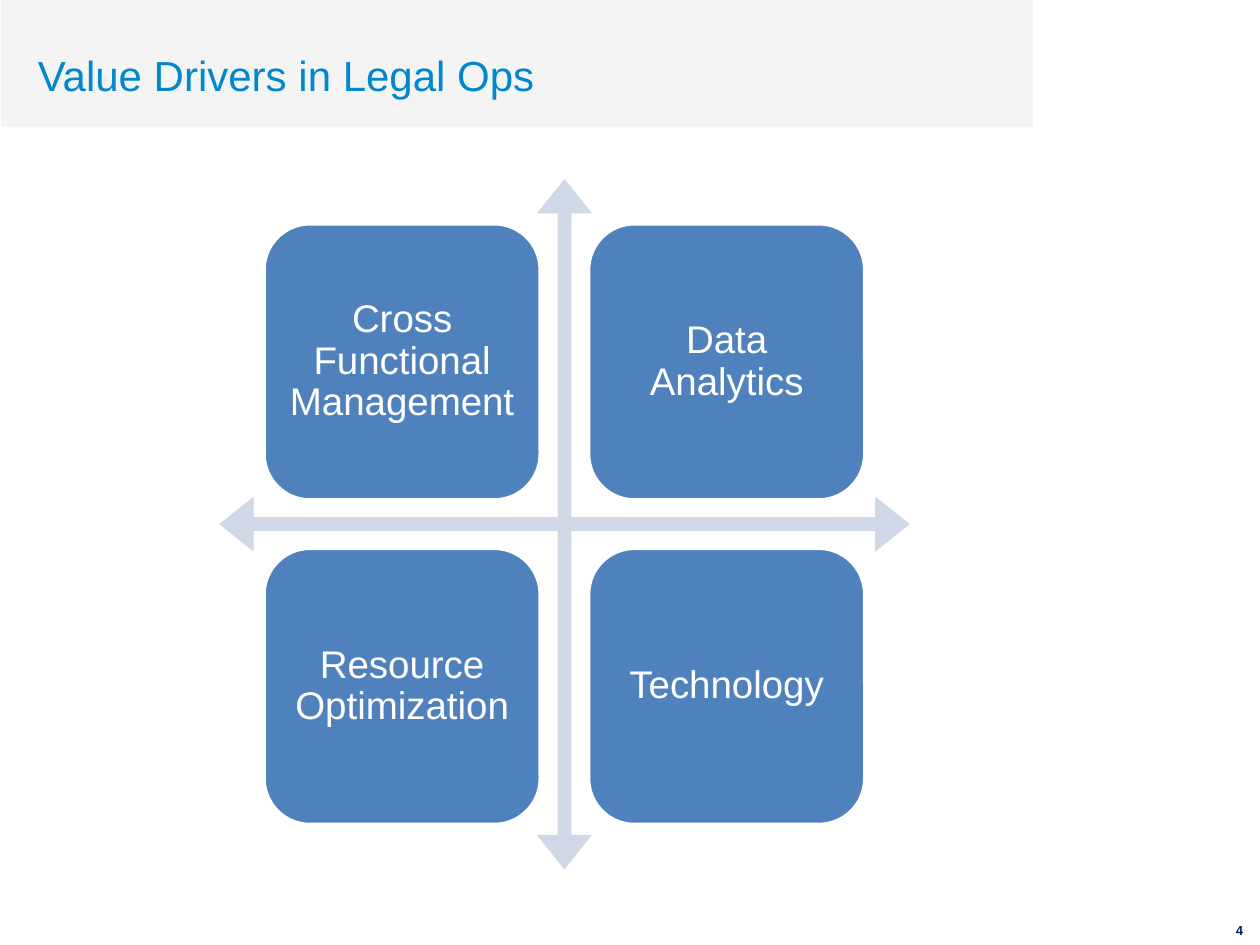
from lxml import etree
from pptx import Presentation
from pptx.dml.color import RGBColor
from pptx.enum.shapes import MSO_SHAPE
from pptx.enum.text import MSO_ANCHOR, PP_ALIGN
from pptx.oxml.ns import qn
from pptx.util import Inches, Pt

RECT, ROUNDED, ARROWS = MSO_SHAPE.RECTANGLE, MSO_SHAPE.ROUNDED_RECTANGLE, MSO_SHAPE.QUAD_ARROW
MIDDLE, TOP = MSO_ANCHOR.MIDDLE, MSO_ANCHOR.TOP
LEFT, CENTER = PP_ALIGN.LEFT, PP_ALIGN.CENTER

TITLE = "Value Drivers in Legal Ops"
PAGE = "4"
DRIVERS = [
    ["Cross Functional Management", "Data Analytics"],
    ["Resource Optimization", "Technology"],
]
TITLE_FONT = {"size": Pt(24), "color": "0088CE"}
PAGE_FONT = {"size": Pt(7.5), "color": "002060", "bold": True}
DRIVER_FONT = {"size": Pt(22), "color": "FFFFFF"}
CROSS_LEFT, CROSS_TOP, CROSS_SIZE = 1.74, 1.42, 5.48
CROSS_ADJUSTMENTS = (0.02, 0.04, 0.05)
TILE = CROSS_SIZE * 0.4
MARGIN = CROSS_SIZE * 0.065
PITCH = CROSS_SIZE - 2 * MARGIN - TILE


def rgb(value):
    return RGBColor.from_string(value)


def write(sp, text, font, align=LEFT, anchor=TOP):
    tf = sp.text_frame
    tf.word_wrap = True
    tf.vertical_anchor = anchor
    p = tf.paragraphs[0]
    p.alignment = align
    r = p.add_run()
    r.text = text
    r.font.name = "Arial"
    for key, value in font.items():
        if key == "color":
            r.font.color.rgb = rgb(value)
        else:
            setattr(r.font, key, value)
    return p


def add_shape(slide, kind, box, fill, line=None):
    sp = slide.shapes.add_shape(kind, *map(Inches, box))
    sp.shadow.inherit = False
    sp.fill.solid()
    sp.fill.fore_color.rgb = rgb(fill)
    if line:
        sp.line.color.rgb = rgb(line)
        sp.line.width = Pt(2)
    else:
        sp.line.fill.background()
    return sp


def add_header(slide):
    band = add_shape(slide, RECT, (0.01, 0, 8.19, 1.01), "F2F2F2")
    color = band.fill._xPr.find(qn("a:solidFill"))[0]
    etree.SubElement(color, qn("a:alpha"), val="80000")
    slide.shapes._spTree.insert(2, band._element)
    title = slide.shapes.title
    title.left, title.top, title.width, title.height = map(Inches, (0.2, 0.09, 7.86, 1.01))
    write(title, TITLE, TITLE_FONT, anchor=MIDDLE)


def add_tile(slide, row, col, text):
    left = CROSS_LEFT + MARGIN + col * PITCH
    top = CROSS_TOP + MARGIN + row * PITCH
    sp = add_shape(slide, ROUNDED, (left, top, TILE, TILE), "4F81BD", "FFFFFF")
    for side in ("left", "right", "top", "bottom"):
        setattr(sp.text_frame, f"margin_{side}", Inches(0.08))
    p = write(sp, text, DRIVER_FONT, CENTER, MIDDLE)
    p.line_spacing = 0.9


def main():
    prs = Presentation()
    prs.slide_width, prs.slide_height = Inches(10), Inches(7.5)
    slide = prs.slides.add_slide(prs.slide_layouts[5])
    add_header(slide)
    number = slide.shapes.add_textbox(*map(Inches, (9.71, 7.27, 0.39, 0.26)))
    write(number, PAGE, PAGE_FONT)
    cross = add_shape(slide, ARROWS, (CROSS_LEFT, CROSS_TOP, CROSS_SIZE, CROSS_SIZE), "D0D8E8")
    for i, value in enumerate(CROSS_ADJUSTMENTS):
        cross.adjustments[i] = value
    for row, names in enumerate(DRIVERS):
        for col, name in enumerate(names):
            add_tile(slide, row, col, name)
    prs.save("out.pptx")


if __name__ == "__main__":
    main()
